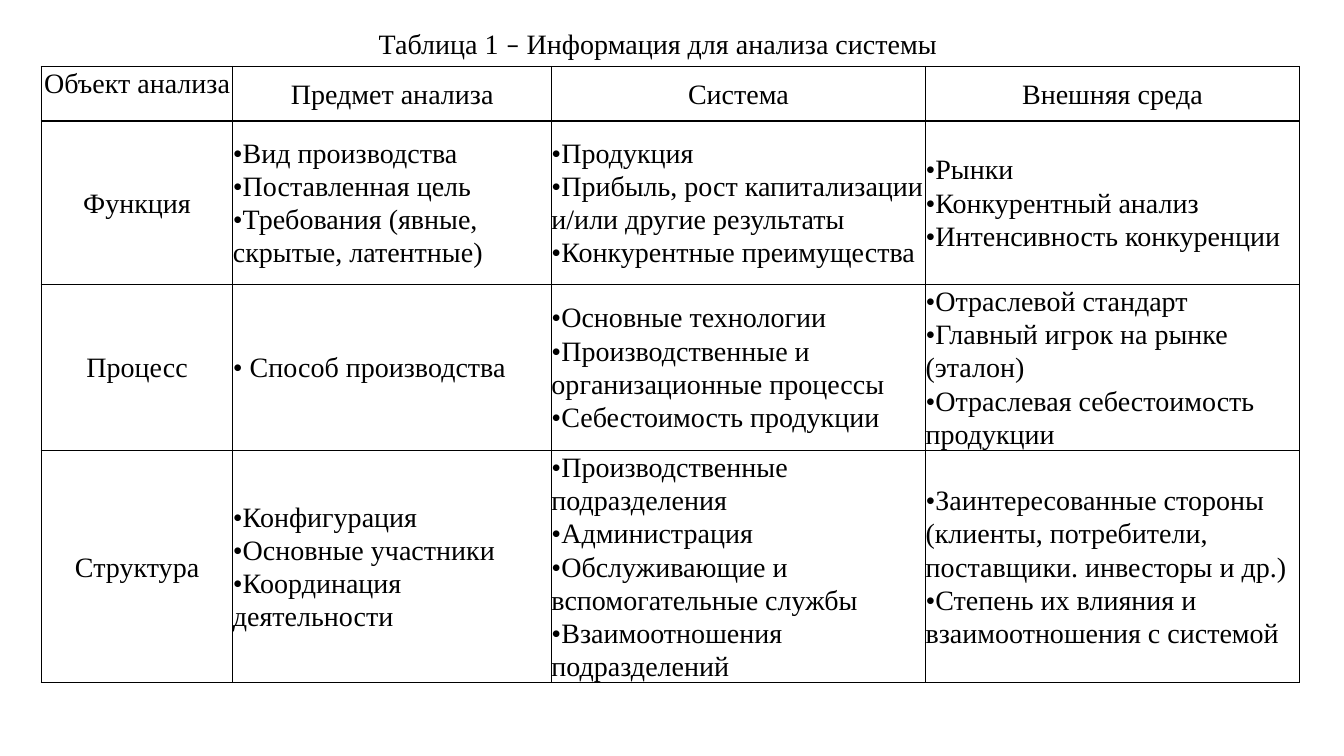
from lxml.etree import SubElement
from pptx import Presentation
from pptx.dml.color import RGBColor
from pptx.enum.text import MSO_ANCHOR, MSO_AUTO_SIZE, PP_ALIGN
from pptx.oxml.ns import qn
from pptx.util import Inches, Pt

BLACK, WHITE = "000000", "FFFFFF"
FONT = "Times New Roman"
WIDTHS = [1.9, 3.16, 3.71, 3.71]
HEIGHTS = [0.54, 1.62, 1.62, 1.89]

# Each cell is a list of paragraphs
ROWS = [
    [["Объект анализа"], ["Предмет анализа"], ["Система"], ["Внешняя среда"]],
    [["Функция"],
     ["•Вид производства", "•Поставленная цель",
      "•Требования (явные, скрытые, латентные)"],
     ["•Продукция", "•Прибыль, рост капитализации и/или другие результаты",
      "•Конкурентные преимущества"],
     ["•Рынки", "•Конкурентный анализ", "•Интенсивность конкуренции"]],
    [["Процесс"],
     ["• Способ производства"],
     ["•Основные технологии", "•Производственные и организационные процессы",
      "•Себестоимость продукции"],
     ["•Отраслевой стандарт", "•Главный игрок на рынке (эталон)",
      "•Отраслевая себестоимость продукции"]],
    [["Структура"],
     ["•Конфигурация", "•Основные участники", "•Координация деятельности"],
     ["•Производственные подразделения", "•Администрация",
      "•Обслуживающие и вспомогательные службы",
      "•Взаимоотношения подразделений"],
     ["•Заинтересованные стороны (клиенты, потребители, "
      "поставщики. инвесторы и др.)",
      "•Степень их влияния и взаимоотношения с системой"]],
]


def color(code):
    return RGBColor.from_string(code)


def style(font, name=FONT):
    font.name = name
    font.size = Pt(20)
    font.bold = False
    font.color.rgb = color(BLACK)


def add_title(slide):
    title = slide.shapes.title
    title.left, title.top = Inches(3.63), Inches(0.21)
    title.width, title.height = Inches(5.79), Inches(0.91)
    frame = title.text_frame
    frame.auto_size = MSO_AUTO_SIZE.NONE
    frame.word_wrap = False
    frame.vertical_anchor = MSO_ANCHOR.TOP
    par = frame.paragraphs[0]
    par.alignment = PP_ALIGN.CENTER
    # The dash has its own font
    for text, name in [("Таблица 1 ", FONT), ("–", "Calibri"),
                       (" Информация для анализа системы", FONT)]:
        run = par.add_run()
        run.text = text
        style(run.font, name)


def add_edges(cell):
    props = cell._tc.get_or_add_tcPr()
    for side in ("lnL", "lnR", "lnT", "lnB"):
        line = SubElement(props, qn("a:" + side), w=str(Pt(1)))
        fill = SubElement(line, qn("a:solidFill"))
        SubElement(fill, qn("a:srgbClr"), val=BLACK)


def fill_cell(cell, lines, align, anchor):
    add_edges(cell)
    cell.fill.solid()
    cell.fill.fore_color.rgb = color(WHITE)
    cell.margin_left = cell.margin_right = Inches(0)
    cell.margin_top = cell.margin_bottom = Inches(0)
    cell.vertical_anchor = anchor
    cell.text = "\n".join(lines)
    for par in cell.text_frame.paragraphs:
        par.alignment = align
        par.line_spacing = 1.07
        style(par.font)


def add_grid(slide):
    table = slide.shapes.add_table(
        len(ROWS), len(WIDTHS), Inches(0.41), Inches(0.66),
        Inches(sum(WIDTHS)), Inches(sum(HEIGHTS))).table
    table.first_row = table.horz_banding = False
    for col, width in zip(table.columns, WIDTHS):
        col.width = Inches(width)
    for row, height in zip(table.rows, HEIGHTS):
        row.height = Inches(height)
    # Headings are centred, lists are flush left
    for r, row in enumerate(ROWS):
        for c, lines in enumerate(row):
            head = r == 0 or c == 0
            align = PP_ALIGN.CENTER if head else PP_ALIGN.LEFT
            anchor = MSO_ANCHOR.TOP if r == c == 0 else MSO_ANCHOR.MIDDLE
            fill_cell(table.cell(r, c), lines, align, anchor)


def main():
    deck = Presentation()
    deck.slide_width, deck.slide_height = Inches(13.33), Inches(7.5)
    slide = deck.slides.add_slide(deck.slide_layouts[5])
    add_grid(slide)
    add_title(slide)
    deck.save("out.pptx")


if __name__ == "__main__":
    main()
